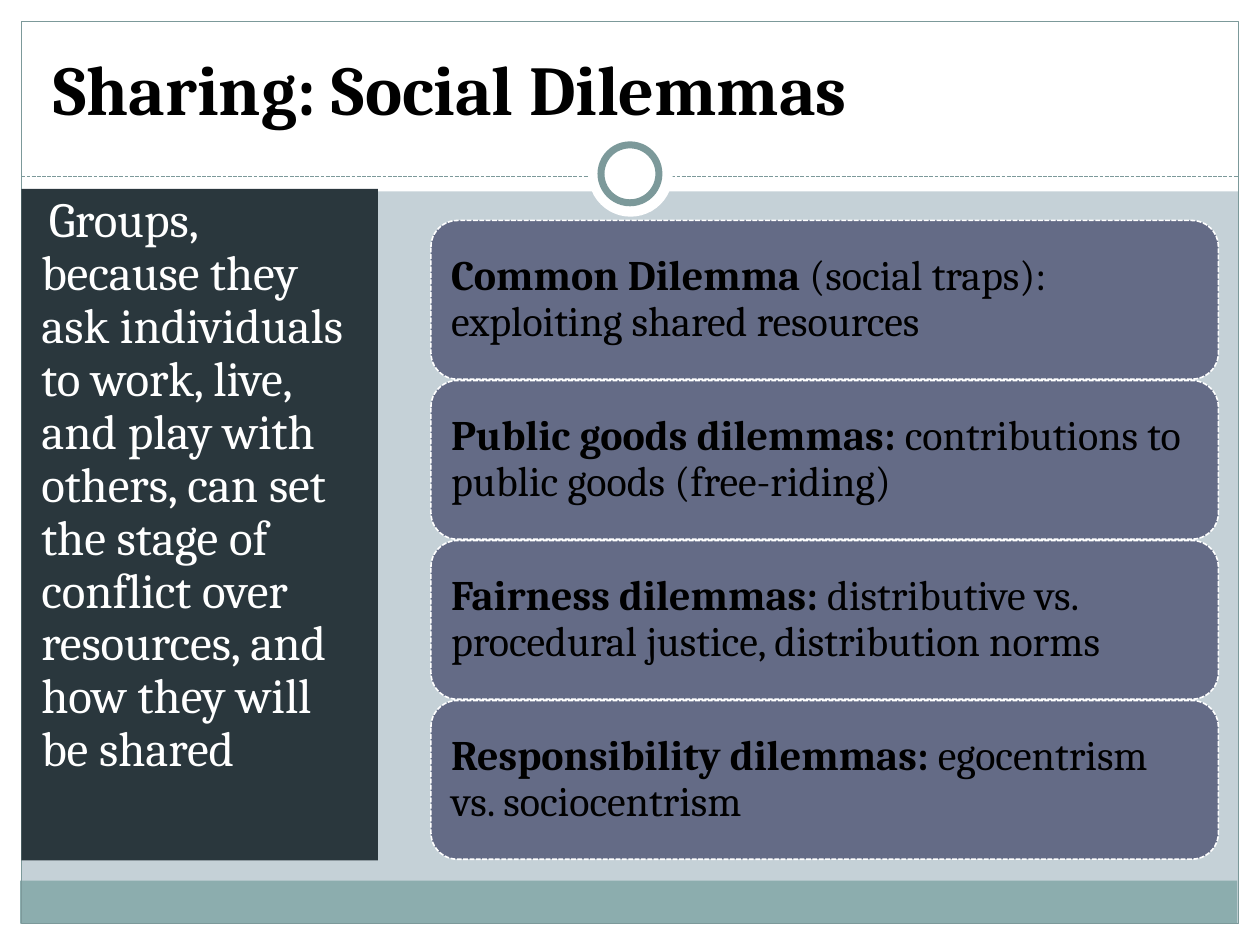
"""Build the slide on sharing and social dilemmas."""
from dataclasses import dataclass
from typing import Optional

from lxml.etree import SubElement
from pptx import Presentation
from pptx.dml.color import RGBColor
from pptx.enum.dml import MSO_LINE
from pptx.enum.shapes import MSO_CONNECTOR, MSO_SHAPE
from pptx.enum.text import MSO_ANCHOR, PP_ALIGN
from pptx.oxml.ns import qn
from pptx.shapes.autoshape import Shape
from pptx.slide import Slide
from pptx.util import Inches, Pt

COLOURS = {
    "background": "C5D1D7",
    "white": "FFFFFF",
    "black": "000000",
    "footer": "8CADAE",
    "frame": "7C999A",
    "sidebar": "2A373D",
    "card": "646B86",
}
FONT = "Cambria"
CARD_TOP, CARD_PITCH = 1.75, 1.27


@dataclass(frozen=True)
class Panel:
    left: float
    top: float
    width: float
    height: float
    fill: Optional[str] = None
    line: Optional[str] = None
    weight: float = 0.75
    dash: Optional[MSO_LINE] = None
    kind: MSO_SHAPE = MSO_SHAPE.RECTANGLE


@dataclass(frozen=True)
class Span:
    text: str
    size: float
    colour: str
    bold: bool = False


@dataclass(frozen=True)
class Dilemma:
    name: str
    detail: str


BACKDROP = [
    Panel(0, 7.33, 10, 0.17, "white"),
    Panel(0, 0, 10, 1.52, "white"),
    Panel(0, 0, 0.17, 7.5, "white"),
    Panel(9.83, 0, 0.17, 7.5, "white"),
    Panel(0.16, 6.99, 9.66, 0.34, "footer"),
    Panel(0.17, 0.17, 9.66, 7.16, line="frame"),
]
RING = [
    Panel(4.67, 1.05, 0.67, 0.67, "white", kind=MSO_SHAPE.OVAL),
    Panel(4.77, 1.15, 0.46, 0.46, "white", "frame", 4, kind=MSO_SHAPE.OVAL),
]
SIDEBAR = Panel(0.17, 1.5, 2.83, 5.33, "sidebar")
SIDEBAR_TEXT = (
    "Groups, because they ask individuals to work, live, and play with others, "
    "can set the stage of conflict over resources, and how they will be shared"
)
DILEMMAS = [
    Dilemma("Common Dilemma ", "(social traps): exploiting shared resources"),
    Dilemma("Public goods dilemmas: ", "contributions to public goods (free-riding)"),
    Dilemma("Fairness dilemmas: ", "distributive vs. procedural justice, distribution norms"),
    Dilemma("Responsibility dilemmas: ", "egocentrism vs. sociocentrism"),
]


def colour(name: str) -> RGBColor:
    """Return the named colour."""
    return RGBColor.from_string(COLOURS[name])


def apply(target: object, values: dict) -> None:
    """Set each attribute of the target from the format values."""
    for name, value in values.items():
        setattr(target, name, value)


def draw_panel(page: Slide, panel: Panel) -> Shape:
    """Draw a preset shape with its fill and outline."""
    edges = map(Inches, (panel.left, panel.top, panel.width, panel.height))
    shape = page.shapes.add_shape(panel.kind, *edges)
    shape.shadow.inherit = False
    if panel.fill:
        shape.fill.solid()
        shape.fill.fore_color.rgb = colour(panel.fill)
    else:
        shape.fill.background()
    if panel.line:
        shape.line.color.rgb = colour(panel.line)
        apply(shape.line, {"width": Pt(panel.weight), "dash_style": panel.dash})
    else:
        shape.line.fill.background()
    return shape


def draw_rule(page: Slide) -> None:
    """Draw the dashed rule under the title."""
    rule = page.shapes.add_connector(
        MSO_CONNECTOR.STRAIGHT, Inches(0.17), Inches(1.4), Inches(9.83), Inches(1.4)
    )
    rule.line.color.rgb = colour("frame")
    apply(rule.line, {"width": Pt(0.75), "dash_style": MSO_LINE.SQUARE_DOT})
    SubElement(rule.element.spPr, qn("a:effectLst"))


def write(box: Shape, spans: list[Span], frame_format: dict, para_format: dict):
    """Fill a shape with one formatted paragraph and return it."""
    frame = box.text_frame
    apply(frame, {"word_wrap": True, **frame_format})
    para = frame.paragraphs[0]
    apply(para, {"alignment": PP_ALIGN.LEFT, **para_format})
    for span in spans:
        run = para.add_run()
        run.text = span.text
        apply(run.font, {"name": FONT, "size": Pt(span.size), "bold": span.bold})
        run.font.color.rgb = colour(span.colour)
    return para


def draw_title(page: Slide) -> None:
    """Draw the slide title."""
    box = page.shapes.add_textbox(Inches(0.33), Inches(0.25), Inches(9.33), Inches(0.83))
    title = Span("Sharing: Social Dilemmas", 40, "black", True)
    write(box, [title], {"vertical_anchor": MSO_ANCHOR.BOTTOM}, {})


def draw_sidebar(page: Slide) -> None:
    """Draw the dark sidebar with its indented text."""
    para = write(
        draw_panel(page, SIDEBAR),
        [Span(SIDEBAR_TEXT, 28, "white")],
        {"vertical_anchor": MSO_ANCHOR.TOP},
        {"line_spacing": 0.9, "space_before": Pt(5.6)},
    )
    properties = para._p.get_or_add_pPr()
    for name in ("marL", "indent"):
        properties.set(name, str(Inches(0.06)))


def draw_card(page: Slide, row: int, dilemma: Dilemma) -> None:
    """Draw one dilemma card at its row."""
    card = draw_panel(page, Panel(
        3.42, CARD_TOP + row * CARD_PITCH, 6.25, 1.26, "card", "white", 0.9,
        MSO_LINE.SQUARE_DOT, MSO_SHAPE.ROUNDED_RECTANGLE,
    ))
    sides = ("left", "top", "right", "bottom")
    margins = {f"margin_{side}": Inches(0.1) for side in sides}
    spans = [Span(dilemma.name, 24, "black", True), Span(dilemma.detail, 24, "black")]
    write(
        card, spans,
        {"vertical_anchor": MSO_ANCHOR.MIDDLE, **margins},
        {"line_spacing": 0.9, "space_after": Pt(8.4)},
    )


def main() -> None:
    """Build and save the deck."""
    deck = Presentation()
    apply(deck, {"slide_width": Inches(10), "slide_height": Inches(7.5)})
    page = deck.slides.add_slide(deck.slide_layouts[6])
    page.background.fill.solid()
    page.background.fill.fore_color.rgb = colour("background")
    for panel in BACKDROP:
        draw_panel(page, panel)
    draw_rule(page)
    for panel in RING:
        draw_panel(page, panel)
    draw_title(page)
    draw_sidebar(page)
    for row, dilemma in enumerate(DILEMMAS):
        draw_card(page, row, dilemma)
    deck.save("out.pptx")


if __name__ == "__main__":
    main()
